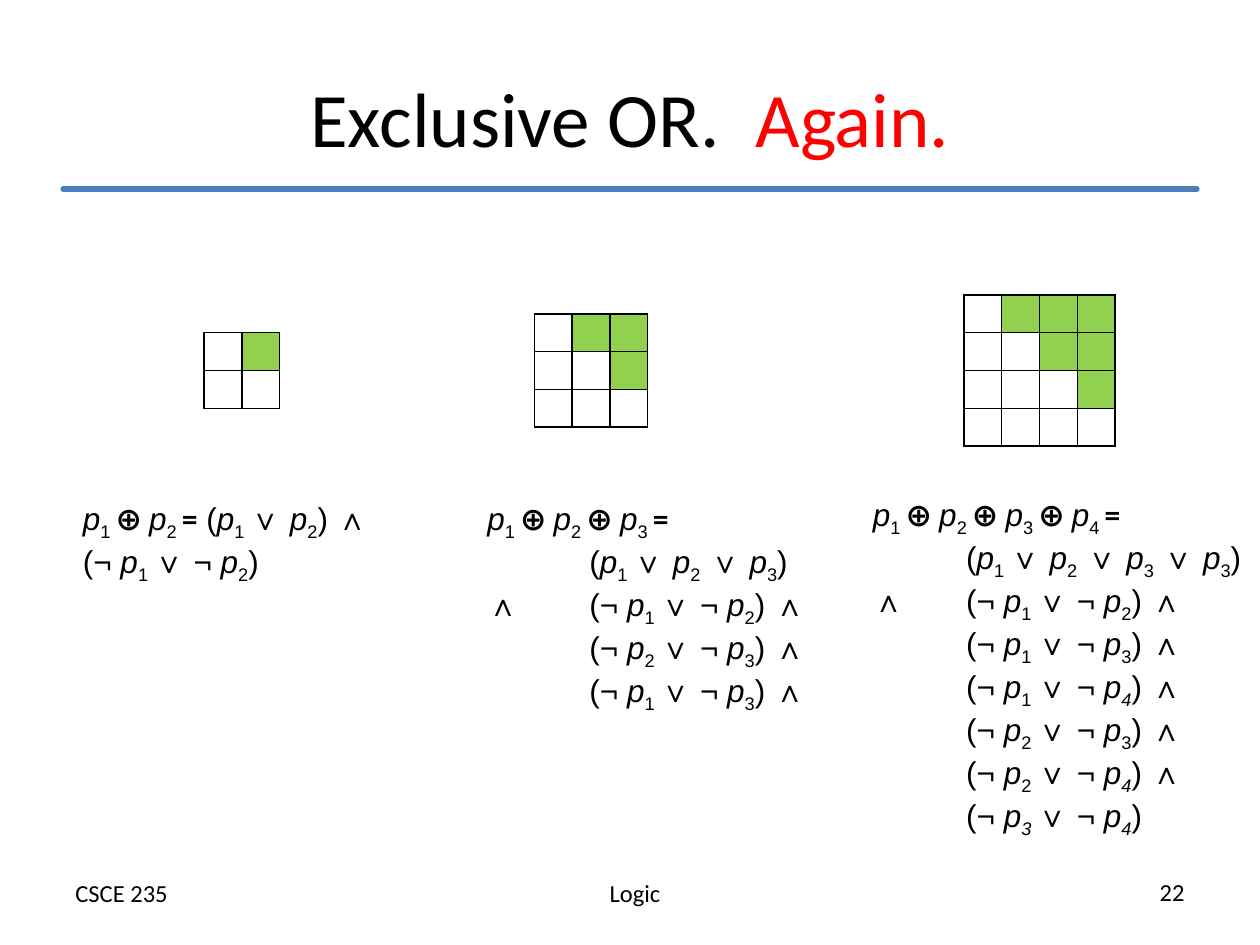
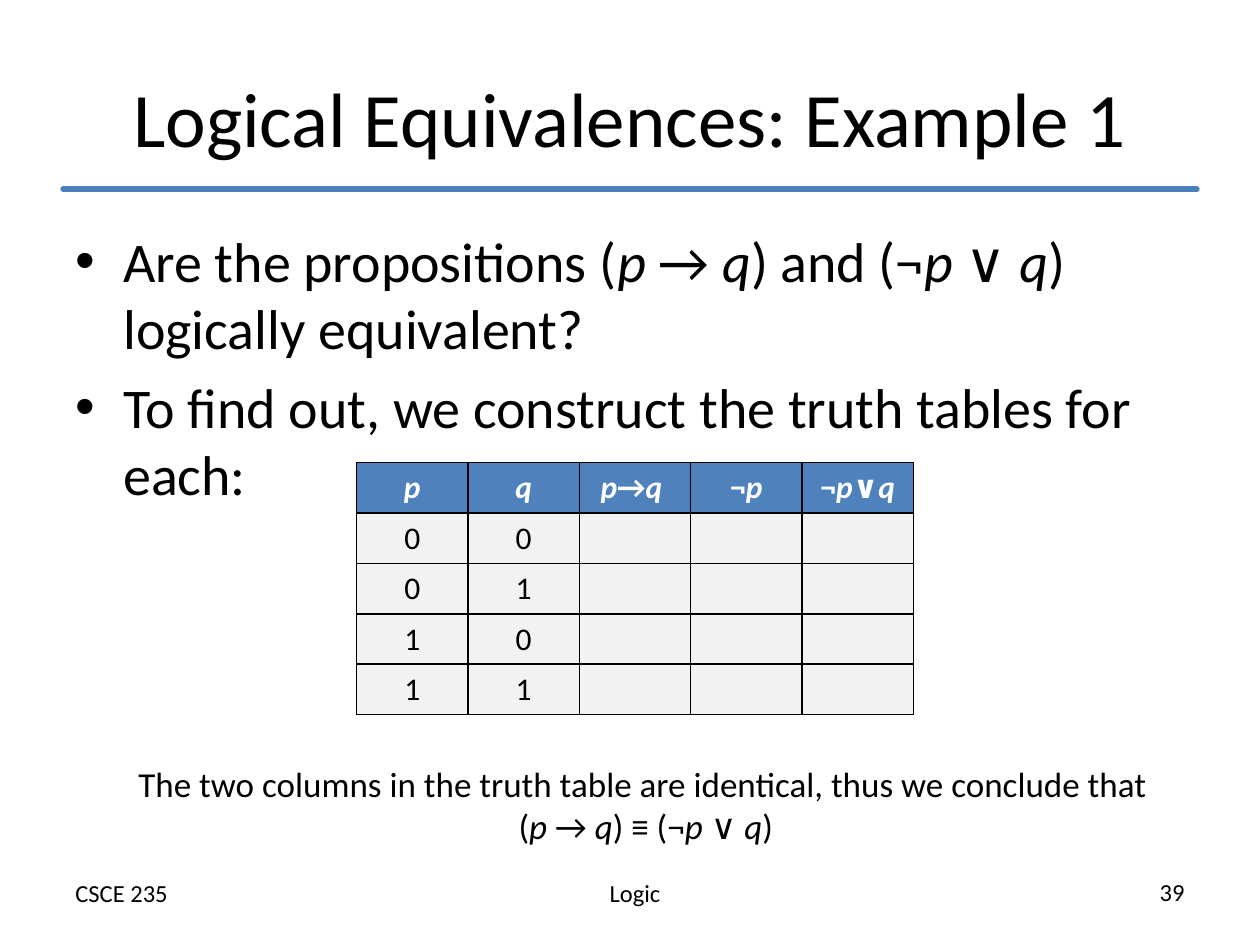
from dataclasses import dataclass

from lxml import etree
from pptx import Presentation
from pptx.dml.color import RGBColor
from pptx.enum.shapes import MSO_CONNECTOR
from pptx.enum.text import MSO_ANCHOR, MSO_AUTO_SIZE, PP_ALIGN
from pptx.oxml.ns import qn
from pptx.util import Pt

LEFT, CENTER, RIGHT = PP_ALIGN.LEFT, PP_ALIGN.CENTER, PP_ALIGN.RIGHT
MIDDLE = MSO_ANCHOR.MIDDLE
NO_FIT, GROW = MSO_AUTO_SIZE.NONE, MSO_AUTO_SIZE.SHAPE_TO_FIT_TEXT
STRAIGHT = MSO_CONNECTOR.STRAIGHT
EMU_PER_PX = 9144  # 100 px to the inch
TITLE_ONLY = 5


@dataclass(frozen=True)
class Theme:
    sans: str = "Calibri"
    formula_font: str = "Arial"
    ink: str = "000000"
    paper: str = "FFFFFF"
    accent: str = "FF0000"
    rule: str = "4B7EBC"
    header: str = "4F81BD"
    body_cell: str = "F2F2F2"
    marked: str = "92D050"
    title: int = 44
    body: int = 32
    remark: int = 20
    small: int = 18
    footer: int = 14
    empty: int = 8


THEME = Theme()

# Markup: each sign switches one format on or off
TOGGLES = {
    "/": {"italic": True},
    "_": {"baseline": -25000},
    "#": {"bold": True, "name": THEME.sans},
    "~": {"color": THEME.accent},
}


def px(length):
    return length * EMU_PER_PX


def add_xml(parent, tag, **attributes):
    return etree.SubElement(parent, qn(tag), attributes)


def marked_runs(text):
    """Split marked text into pairs of wording and formats."""
    active, wording = [], ""
    for sign in text:
        if sign not in TOGGLES:
            wording += sign
            continue
        if wording:
            yield wording, [TOGGLES[key] for key in active]
        wording = ""
        if sign in active:
            active.remove(sign)
        else:
            active.append(sign)
    if wording:
        yield wording, [TOGGLES[key] for key in active]


class Deck:
    def __init__(self, theme):
        self.theme = theme
        self.prs = Presentation()
        self.prs.slide_width, self.prs.slide_height = px(1000), px(750)
        self.slide = None

    def new_slide(self, title, number):
        """Start a slide with the shared title, rule and footers."""
        self.slide = self.prs.slides.add_slide(self.prs.slide_layouts[TITLE_ONLY])
        footers = (("Logic", 358, 692, CENTER), ("CSCE 235", 50, 692, LEFT),
                   (number, 658, 691, RIGHT))
        for wording, left, top, align in footers:
            self.text_box((left, top, 292, 34), [wording], self.theme.footer, align=align)
        self.rule(50, 150, 950)
        heading = self.slide.shapes.title
        place = {"left": px(50), "top": px(30), "width": px(900), "height": px(125)}
        for name, value in place.items():
            setattr(heading, name, value)
        frame = heading.text_frame
        frame.auto_size, frame.vertical_anchor = NO_FIT, MIDDLE
        self.add_runs(frame.paragraphs[0], title, self.theme.title, align=CENTER)

    def add_runs(self, paragraph, text, size, font=None, color=None, bold=False, align=LEFT):
        """Fill a paragraph from marked text."""
        paragraph.alignment = align
        for wording, formats in marked_runs(text):
            values = {"name": font or self.theme.sans, "size": Pt(size), "bold": bold,
                      "italic": False, "color": color or self.theme.ink, "baseline": 0}
            for change in formats:
                values.update(change)
            run = paragraph.add_run()
            run.text = wording
            run.font.color.rgb = RGBColor.from_string(values.pop("color"))
            baseline = values.pop("baseline")
            if baseline:
                run.font._element.set("baseline", str(baseline))
            for name, value in values.items():
                setattr(run.font, name, value)

    def text_box(self, box, lines, size, fit=GROW, tabs=(), **style):
        frame = self.slide.shapes.add_textbox(*map(px, box)).text_frame
        frame.word_wrap, frame.auto_size = True, fit
        for index, line in enumerate(lines):
            paragraph = frame.add_paragraph() if index else frame.paragraphs[0]
            self.add_runs(paragraph, line, size, **style)
            if tabs:
                stops = add_xml(paragraph._p.get_or_add_pPr(), "a:tabLst")
                for tab in tabs:
                    add_xml(stops, "a:tab", pos=str(px(tab)), algn="l")
        return frame

    def bullets(self, box, lines):
        frame = self.text_box(box, lines, self.theme.body, fit=NO_FIT)
        for paragraph in frame.paragraphs:
            props = paragraph._p.get_or_add_pPr()
            for name, indent in {"marL": 38, "indent": -38}.items():
                props.set(name, str(px(indent)))
            add_xml(add_xml(props, "a:spcBef"), "a:spcPct", val="20000")
            add_xml(props, "a:buFont", typeface=self.theme.formula_font)
            add_xml(props, "a:buChar", char="•")

    def rule(self, left, top, right):
        line = self.slide.shapes.add_connector(
            STRAIGHT, px(left), px(top), px(right), px(top))
        line.line.width = Pt(3)
        line.line.color.rgb = RGBColor.from_string(self.theme.rule)
        props = line._element.spPr
        props.find(qn("a:ln")).set("cap", "rnd")
        add_xml(props, "a:effectLst")

    def table(self, box, rows, columns):
        table = self.slide.shapes.add_table(rows, columns, *map(px, box)).table
        table.first_row = table.horz_banding = False
        return table

    def cell(self, cell, text, fill, size, **style):
        """Border, fill and label one table cell."""
        props = cell._tc.get_or_add_tcPr()
        for side in ("a:lnL", "a:lnR", "a:lnT", "a:lnB"):
            border = add_xml(props, side, w=str(Pt(1)))
            add_xml(add_xml(border, "a:solidFill"), "a:srgbClr", val=self.theme.ink)
        if fill:
            cell.fill.solid()
            cell.fill.fore_color.rgb = RGBColor.from_string(fill)
        else:
            cell.fill.background()
        paragraph = cell.text_frame.paragraphs[0]
        self.add_runs(paragraph, text, size, align=CENTER, **style)
        if not text:
            add_xml(paragraph._p, "a:endParaRPr", sz=str(self.theme.empty * 100))

    def pair_grid(self, left, top, count):
        """Square grid with the cells above the diagonal marked."""
        side = 30 * count
        grid = self.table((left, top, side, side), count, count)
        for row in range(count):
            for column in range(count):
                fill = self.theme.marked if column > row else None
                self.cell(grid.cell(row, column), "", fill, self.theme.empty)

    def truth_table(self, box, headers, inputs):
        table = self.table(box, len(inputs) + 1, len(headers))
        for column, header in enumerate(headers):
            self.cell(table.cell(0, column), header, self.theme.header, self.theme.small,
                      color=self.theme.paper, bold=True)
            for row, values in enumerate(inputs, 1):
                text = values[column] if column < len(values) else ""
                self.cell(table.cell(row, column), text, self.theme.body_cell,
                          self.theme.small)

    def formula(self, box, lines, tabs=()):
        self.text_box(box, lines, self.theme.small, tabs=tabs, font=self.theme.formula_font)


# Parts of the formulas
def exclusive_or(count):
    return "#⊕ #".join(f"/p/_{k} _" for k in range(1, count + 1)) + "#=#"


def at_least_one(first, *others):
    return f"(/p/_{first} _∨ " + " ∨ ".join(f"/p/_{k}_" for k in others) + ")"


def not_both(first, second):
    return f"(¬/ p/_{first} _∨ ¬/ p/_{second}_)"


def exclusive_or_slide(deck):
    deck.new_slide("Exclusive OR.  ~Again.", "22")
    for left, top, count in ((162, 264, 2), (424, 249, 3), (765, 234, 4)):
        deck.pair_grid(left, top, count)

    # Two propositions
    deck.formula((56, 391, 264, 71),
                 [f"{exclusive_or(2)} {at_least_one(1, 2)} ∧ \t{not_both(1, 2)}"])

    # Three propositions
    first, *others = [not_both(*pair) + " ∧" for pair in ((1, 2), (2, 3), (1, 3))]
    deck.formula((377, 391, 276, 162),
                 [exclusive_or(3), f"\t{at_least_one(1, 2, 3)} ∧ \t{first}"]
                 + ["\t" + clause for clause in others], tabs=(81, 156))

    # Four propositions
    pairs = ((1, 2), (1, 3), (1, "/4/"), (2, 3), (2, "/4/"))
    first, *others = [not_both(*pair) + " ∧" for pair in pairs]
    others.append(not_both("/3/", "/4/"))
    deck.formula((683, 388, 317, 252),
                 [exclusive_or(4), f"\t{at_least_one(1, 2, 3, 3)} ∧ \t{first}"]
                 + ["\t" + clause for clause in others], tabs=(74,))


def equivalence_slide(deck):
    deck.new_slide("Logical Equivalences: Example 1", "39")
    implication, disjunction = "(/p /→ /q/)", "(¬/p /∨ /q/)"
    deck.bullets((50, 175, 900, 495), [
        f"Are the propositions {implication} and {disjunction} logically equivalent?",
        "To find out, we construct the truth tables for each:",
    ])
    deck.truth_table((283, 367, 442, 200),
                     ["/p/", "/q/", "/p/→/q /", "¬/p/", "¬/p/∨/q/"],
                     ["00", "01", "10", "11"])
    conclusion = deck.text_box((100, 600, 825, 77), [
        "The two columns in the truth table are identical, thus we conclude that",
        f"{implication} ≡ {disjunction}",
    ], THEME.remark)
    conclusion.paragraphs[1].alignment = CENTER


def main():
    deck = Deck(THEME)
    exclusive_or_slide(deck)
    equivalence_slide(deck)
    deck.prs.save("out.pptx")


if __name__ == "__main__":
    main()
